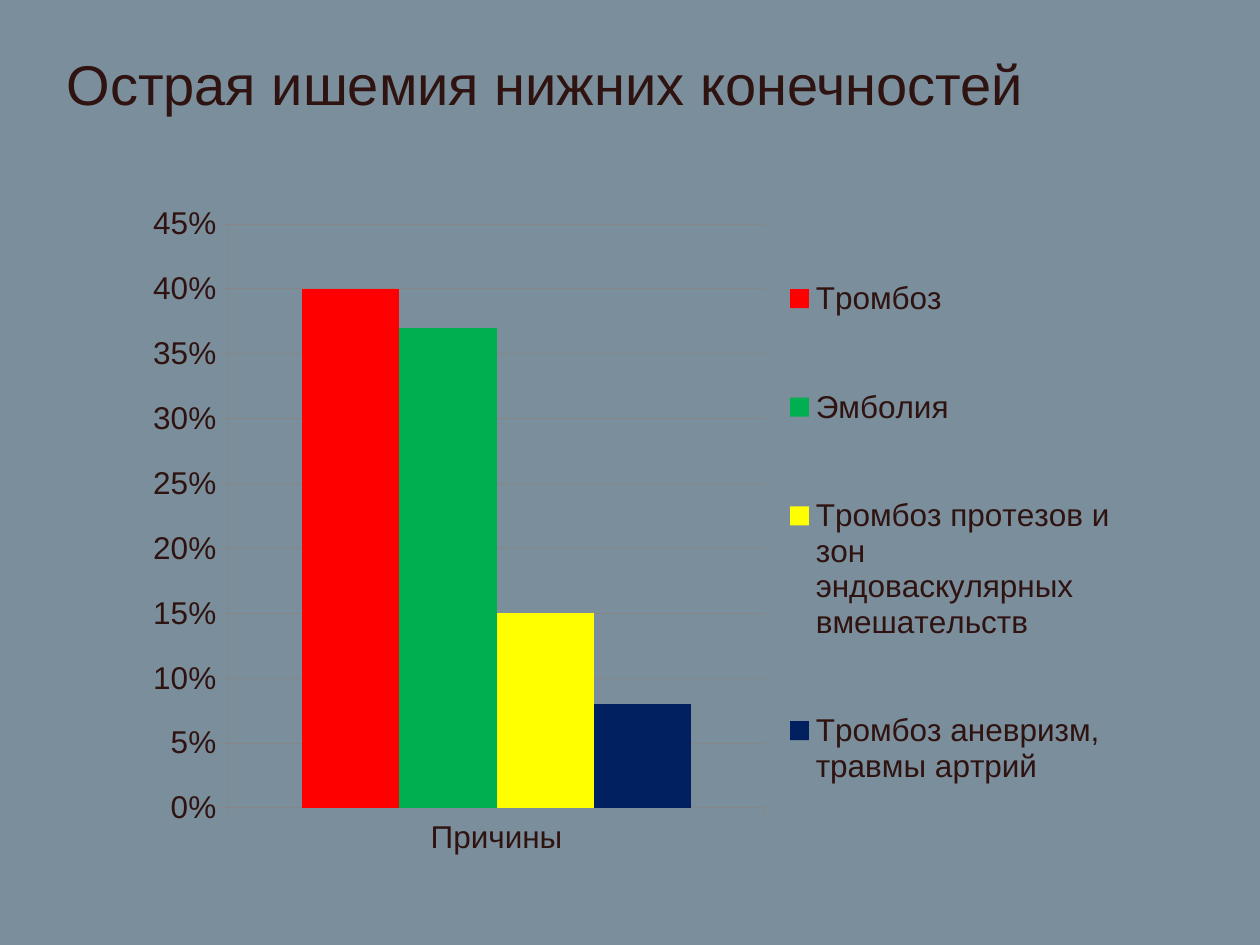
from lxml import etree
from pptx import Presentation
from pptx.chart.data import CategoryChartData
from pptx.dml.color import RGBColor
from pptx.enum.chart import XL_CHART_TYPE, XL_LEGEND_POSITION, XL_TICK_MARK
from pptx.enum.text import MSO_ANCHOR, PP_ALIGN
from pptx.oxml import parse_xml
from pptx.oxml.ns import nsdecls
from pptx.util import Inches, Pt

COLUMN = XL_CHART_TYPE.COLUMN_CLUSTERED
RIGHT = XL_LEGEND_POSITION.RIGHT
OUT = XL_TICK_MARK.OUTSIDE
MIDDLE = MSO_ANCHOR.MIDDLE
CENTER = PP_ALIGN.CENTER

HUES = {"back": "7A8E9C", "text": "2F1311", "grid": "868686",
        "red": "FF0000", "green": "00B050", "yellow": "FFFF00", "navy": "002060"}
RGB = {name: RGBColor.from_string(code) for name, code in HUES.items()}

CAUSES = [("Тромбоз", 0.4, "red"),
          ("Эмболия", 0.37, "green"),
          ("Тромбоз протезов и зон эндоваскулярных вмешательств", 0.15, "yellow"),
          ("Тромбоз аневризм, травмы артрий", 0.08, "navy")]


def style(font, size):
    for key, value in {"name": "Arial", "size": Pt(size), "bold": False}.items():
        setattr(font, key, value)
    font.color.rgb = RGB["text"]


def layout(box, inner=False):
    """Make a manual chart layout from percentages of the chart area."""
    node = parse_xml(f"<c:layout {nsdecls('c')}><c:manualLayout/></c:layout>")
    parts = {"layoutTarget": "inner"} if inner else {}
    parts.update(xMode="edge", yMode="edge")
    parts.update({tag: share / 100 for tag, share in zip("xywh", box)})
    for tag, value in parts.items():
        etree.SubElement(node[0], f"{{{node.nsmap['c']}}}{tag}", val=str(value))
    return node


deck = Presentation()
deck.slide_width, deck.slide_height = Inches(10), Inches(7.5)
slide = deck.slides.add_slide(deck.slide_layouts[5])
slide.background.fill.solid()
slide.background.fill.fore_color.rgb = RGB["back"]

# Title
title = slide.shapes.title
place = {"left": 0.24, "top": 0.25, "width": 8.18, "height": 0.82}
for key, value in place.items():
    setattr(title, key, Inches(value))
frame = title.text_frame
frame.text = "Острая ишемия нижних конечностей"
frame.vertical_anchor = MIDDLE
para = frame.paragraphs[0]
para.alignment = CENTER
style(para.runs[0].font, 32)

# Chart of causes
data = CategoryChartData(number_format="0%")
data.categories = ["Причины"]
for name, share, hue in CAUSES:
    data.add_series(name, [share])
chart = slide.shapes.add_chart(COLUMN, Inches(1.06), Inches(1.53),
                               Inches(7.95), Inches(5.37), data).chart
chart.has_title = False
style(chart.font, 18)

# Columns
plot = chart.plots[0]
plot.gap_width = 150
plot.overlap = 0
plot.vary_by_categories = False
for bars, (name, share, hue) in zip(plot.series, CAUSES):
    bars.format.fill.solid()
    bars.format.fill.fore_color.rgb = RGB[hue]

# Axes and grid
scale = chart.value_axis
limits = {"minimum_scale": 0, "maximum_scale": 0.45, "major_unit": 0.05,
          "has_major_gridlines": True}
for key, value in limits.items():
    setattr(scale, key, value)
scale.tick_labels.number_format = "0%"
scale.tick_labels.number_format_is_linked = False
for axis in (scale, chart.category_axis):
    axis.major_tick_mark = OUT
for line in (scale.major_gridlines.format.line, scale.format.line,
             chart.category_axis.format.line):
    line.color.rgb = RGB["grid"]
    line.width = Pt(0.25)

# Legend
chart.has_legend = True
legend = chart.legend
legend.position = RIGHT
legend.include_in_layout = False
style(legend.font, 18)

# Places of the plot and the legend
area = chart.element.chart.plotArea
for old in area.xpath("c:layout"):
    area.remove(old)
area.insert(0, layout((9.5, 4.6, 53.5, 86.3), inner=True))
key_box = chart.element.chart.xpath("c:legend")[0]
for old in key_box.xpath("c:layout"):
    key_box.remove(old)
key_box.xpath("c:legendPos")[0].addnext(layout((65, 2.2, 33, 96)))

deck.save("out.pptx")
